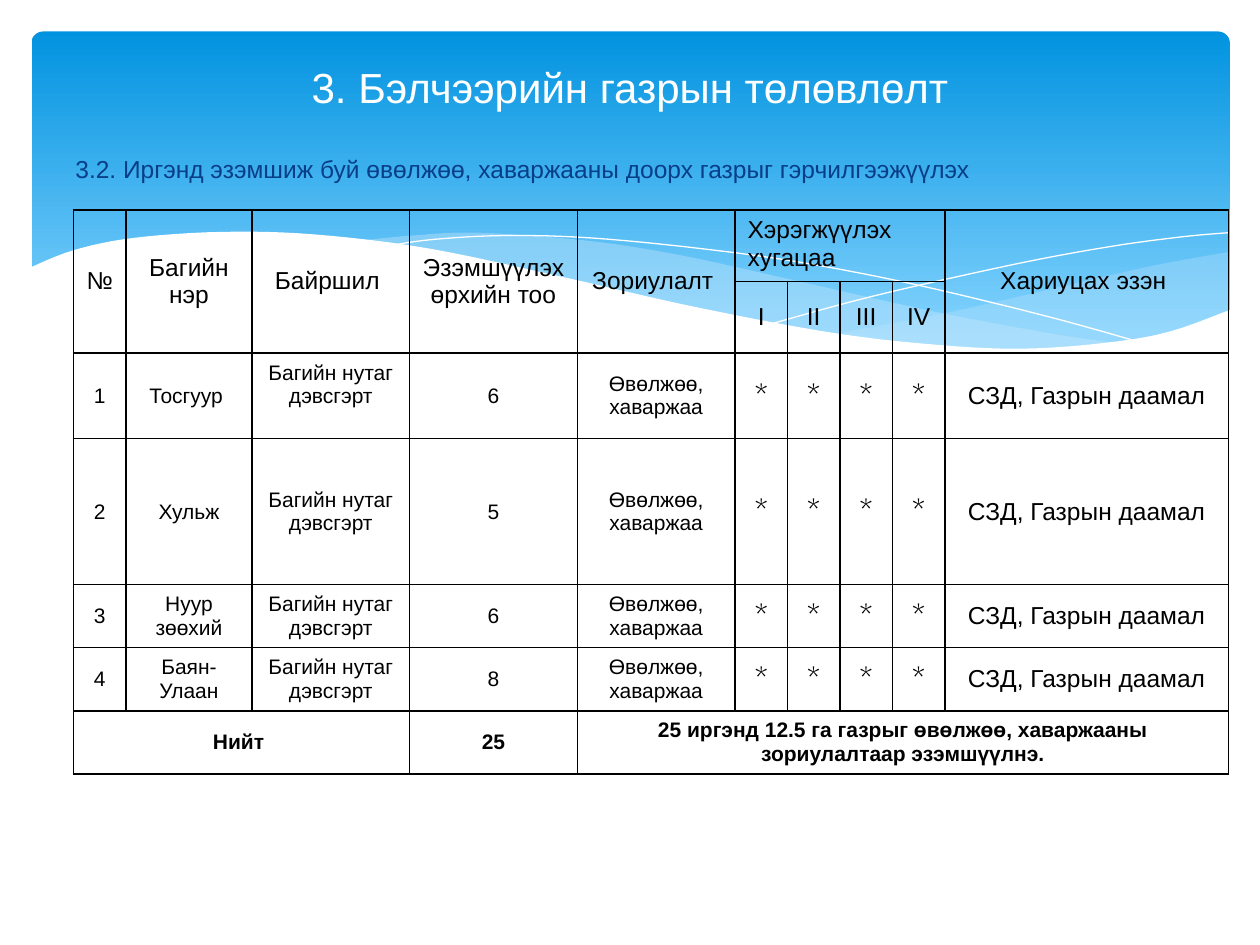
from dataclasses import dataclass

from lxml import etree
from pptx import Presentation
from pptx import util as u
from pptx.dml.color import RGBColor
from pptx.enum import shapes, text
from pptx.oxml import ns

Points = list[tuple[float, float]]
CENTER, LEFT = text.PP_ALIGN.CENTER, text.PP_ALIGN.LEFT
MIDDLE, TOP = text.MSO_ANCHOR.MIDDLE, text.MSO_ANCHOR.TOP


@dataclass
class Wave:
    curves: list[Points]  # smooth edges, joined in order
    fill: str | None = None  # without a fill the wave is a white hairline
    alpha: int = 100
    corners: Points | None = None


@dataclass
class Entry:
    row: int
    col: int
    words: str
    size: float = 14
    rows: int = 1
    cols: int = 1
    font: str = "Arial"
    bold: bool = False
    align: text.PP_ALIGN = CENTER
    anchor: text.MSO_ANCHOR = MIDDLE
    lift: float = 0  # extra bottom margin


def rgb(value: str) -> RGBColor:
    return RGBColor.from_string(value)


def smooth(knots: Points, steps: int = 6) -> Points:
    """Catmull-Rom curve through the knots."""
    ends = [knots[0], *knots, knots[-1]]
    result = [knots[0]]
    for a, b, c, d in zip(ends, ends[1:], ends[2:], ends[3:]):
        for step in range(1, steps + 1):
            t = step / steps
            x, y = (
                (2 * q + (r - p) * t + (2 * p - 5 * q + 4 * r - s) * t**2
                 + (3 * q - p - 3 * r + s) * t**3) / 2
                for p, q, r, s in zip(a, b, c, d)
            )
            result.append((x, y))
    return result


def draw_wave(page, wave: Wave) -> None:
    outline = [point for curve in wave.curves for point in smooth(curve)]
    outline += wave.corners or []
    places = [(u.Pt(x), u.Pt(y)) for x, y in outline]
    builder = page.shapes.build_freeform(*places[0])
    builder.add_line_segments(places[1:], close=wave.fill is not None)
    shape = builder.convert_to_shape()
    shape.shadow.inherit = False
    if wave.fill is None:
        shape.fill.background()
        shape.line.color.rgb = rgb("FFFFFF")
        shape.line.width = u.Pt(0)
        return
    shape.line.fill.background()
    shape.fill.solid()
    shape.fill.fore_color.rgb = rgb(wave.fill)
    if wave.alpha < 100:
        color = shape.element.spPr.find(".//" + ns.qn("a:srgbClr"))
        etree.SubElement(color, ns.qn("a:alpha"), val=str(wave.alpha * 1000))


def write(frame, words: str, size: float, color: str, align: text.PP_ALIGN,
          font: str = "Arial", bold: bool = False) -> None:
    frame.word_wrap = True
    para = frame.paragraphs[0]
    para.text = words
    para.alignment = align
    para.font.name, para.font.size, para.font.bold = font, u.Pt(size), bold
    para.font.color.rgb = rgb(color)


def add_borders(cell, color: str = "000000", width: float = 1) -> None:
    properties = cell._tc.get_or_add_tcPr()
    for side in ("lnL", "lnR", "lnT", "lnB"):
        line = etree.SubElement(properties, ns.qn("a:" + side), w=str(u.Pt(width)))
        fill = etree.SubElement(line, ns.qn("a:solidFill"))
        etree.SubElement(fill, ns.qn("a:srgbClr"), val=color)


def fill_entry(table, entry: Entry) -> None:
    cell = table.cell(entry.row, entry.col)
    if entry.rows > 1 or entry.cols > 1:
        cell.merge(table.cell(entry.row + entry.rows - 1, entry.col + entry.cols - 1))
    cell.vertical_anchor = entry.anchor
    cell.margin_bottom = u.Pt(3.6 + entry.lift)
    write(cell.text_frame, entry.words, entry.size, "000000", entry.align,
          entry.font, entry.bold)


WAVES = [
    Wave([[(702, 144), (663, 151), (620, 160.6), (542, 178.6), (476, 191)],
          [(476, 191), (518, 196), (562, 199.5), (601, 199.5), (640, 196),
           (673, 188.6), (702.7, 178)]], "C6E7FC", 29),
    Wave([[(643, 196.6), (603, 191), (533.5, 178), (453, 160), (389.5, 146),
           (335, 137.5), (273.6, 133), (236, 134.6), (206, 137.5)],
          [(206, 137.5), (260.6, 146), (323, 160), (381.6, 173), (456.5, 188),
           (520, 197), (573, 200), (610.6, 199.5), (643, 196.6)]], "C6E7FC", 40),
    Wave([[(222.5, 140.4), (248, 136.8), (289, 134.6), (338, 136), (400, 142),
           (458, 150), (523.4, 162.7), (598, 180.7), (653, 196)]]),
    Wave([[(441, 185), (500, 169), (580, 151), (634, 141), (675, 135.4), (702, 133)]]),
    Wave([[(17, 153), (42, 143), (76, 136), (127, 132.5), (180, 134), (245, 142),
           (322, 158.4), (400, 176), (481, 191), (548, 198), (593, 199),
           (639, 195), (670, 189), (703, 177)]], "FFFFFF",
         corners=[(703, 237), (17, 237)]),
]
COLUMNS = [30, 72, 90, 96, 90, 30, 30, 30, 30, 162]
ROWS = [38.9, 38.6, 47.7, 83.4, 34, 34, 34]
HEADINGS = {0: "№", 1: "Багийн нэр", 2: "Байршил ", 3: "Эзэмшүүлэх өрхийн тоо",
            4: "Зориулалт ", 9: "Хариуцах эзэн "}
QUARTERS = ["I", "II", "III", "IV"]
TEAMS = [("Тосгуур ", 6), ("Хульж", 5), ("Нуур зөөхий", 6), ("Баян-Улаан", 8)]


def table_entries() -> list[Entry]:
    entries = [Entry(0, col, words, rows=2) for col, words in HEADINGS.items()]
    entries.append(Entry(0, 5, "Хэрэгжүүлэх хугацаа", cols=4, align=LEFT, anchor=TOP))
    entries += [Entry(1, col, words) for col, words in enumerate(QUARTERS, 5)]
    for number, (team, households) in enumerate(TEAMS, 1):
        row = number + 1
        entries += [
            Entry(row, 0, str(number), 12),
            Entry(row, 1, team, 12),
            Entry(row, 2, "Багийн нутаг дэвсгэрт", 12, lift=13 if number == 1 else 0),
            Entry(row, 3, str(households), 12),
            Entry(row, 4, "Өвөлжөө, хаваржаа", 12),
            *(Entry(row, col, "*", 18, font="Cabin") for col in range(5, 9)),
            Entry(row, 9, "СЗД, Газрын даамал"),
        ]
    total = sum(households for _, households in TEAMS)
    summary = f"{total} иргэнд 12.5 га газрыг өвөлжөө, хаваржааны зориулалтаар эзэмшүүлнэ."
    return entries + [
        Entry(6, 0, "Нийт ", 12, cols=3, bold=True),
        Entry(6, 3, str(total), 12, bold=True),
        Entry(6, 4, summary, 12, cols=6, bold=True),
    ]


def main() -> None:
    deck = Presentation()
    deck.slide_width, deck.slide_height = u.Pt(720), u.Pt(540)
    page = deck.slides.add_slide(deck.slide_layouts[5])

    # Blue banner with waves
    banner = page.shapes.add_shape(shapes.MSO_SHAPE.ROUNDED_RECTANGLE,
                                   u.Pt(18), u.Pt(18), u.Pt(684.7), u.Pt(194.4))
    banner.adjustments[0] = 0.034
    banner.shadow.inherit = False
    banner.line.fill.background()
    banner.fill.gradient()
    banner.fill.gradient_angle = 270
    stops = [(0, "0293E0"), (0.9, "83D3FE")]
    for stop, (position, color) in zip(banner.fill.gradient_stops, stops):
        stop.position, stop.color.rgb = position, rgb(color)
    for wave in WAVES:
        draw_wave(page, wave)

    # Title, brought in front of the banner
    title = page.shapes.title
    title.element.getparent().append(title.element)
    title.left, title.top, title.width, title.height = map(u.Pt, (36, 21.6, 648, 56.2))
    title.text_frame.vertical_anchor = MIDDLE
    write(title.text_frame, "3. Бэлчээрийн газрын төлөвлөлт", 24, "FFFFFF", CENTER)

    # Subheading
    box = page.shapes.add_textbox(u.Pt(36), u.Pt(84.2), u.Pt(672), u.Pt(26))
    write(box.text_frame,
          "3.2. Иргэнд эзэмшиж буй өвөлжөө, хаваржааны доорх газрыг гэрчилгээжүүлэх",
          14, "073E87", LEFT)

    # Plan table
    table = page.shapes.add_table(len(ROWS), len(COLUMNS), u.Pt(42), u.Pt(120),
                                  u.Pt(sum(COLUMNS)), u.Pt(sum(ROWS))).table
    table.first_row = table.horz_banding = False
    for column, width in zip(table.columns, COLUMNS):
        column.width = u.Pt(width)
    for row, height in zip(table.rows, ROWS):
        row.height = u.Pt(height)
    for cell in table.iter_cells():
        add_borders(cell)
        cell.fill.background()
    for entry in table_entries():
        fill_entry(table, entry)

    deck.save("out.pptx")


if __name__ == "__main__":
    main()
